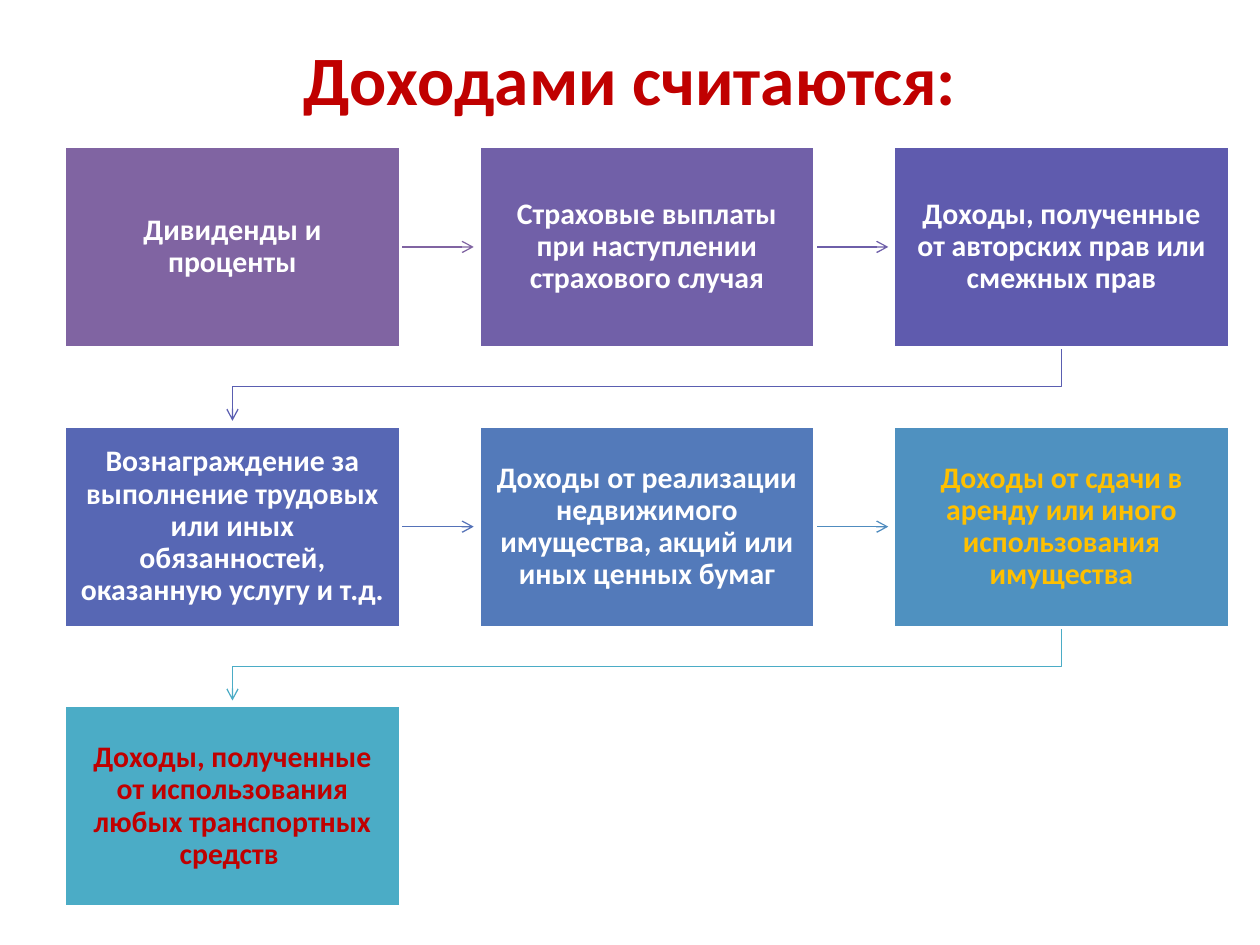
from lxml.etree import SubElement as Sub
from pptx import Presentation
from pptx.dml.color import RGBColor as RGB
from pptx.enum.shapes import MSO_CONNECTOR as Link, MSO_SHAPE as Kind
from pptx.enum.text import MSO_ANCHOR as Anchor, PP_ALIGN as Align
from pptx.oxml.ns import qn
from pptx.util import Inches, Pt

COLORS = {
    "white": "FFFFFF", "red": "C00000", "gold": "FFC000",
    "plum": "8064A2", "violet": "7160A8", "indigo": "5F5BAE", "navy": "5767B4",
    "blue": "537ABA", "sky": "4F91C0", "teal": "4BACC6",
    "to violet": "6E5FA9", "to navy": "5A5EB1",
    "to blue": "5572B8", "to sky": "508CBF",
}
COLS = 3
LEFT, TOP = 0.51, 1.16
WIDE, HIGH = 2.67, 1.6
STEP_X, STEP_Y = 3.29, 2.22
GAP = 0.04
TURN = 0.31

ITEMS = [
    ("Дивиденды и проценты", "plum", "white", "plum"),
    ("Страховые выплаты при наступлении страхового случая",
     "violet", "white", "to violet"),
    ("Доходы, полученные от авторских прав или смежных прав",
     "indigo", "white", "to navy"),
    ("Вознаграждение за выполнение трудовых или иных обязанностей, "
     "оказанную услугу и т.д.", "navy", "white", "to blue"),
    ("Доходы от реализации недвижимого имущества, акций или иных ценных бумаг",
     "blue", "white", "to sky"),
    ("Доходы от сдачи в аренду или иного использования имущества",
     "sky", "gold", "teal"),
    ("Доходы, полученные от использования любых транспортных средств ",
     "teal", "red", None),
]


class Deck:
    font = "Calibri"

    def __init__(self):
        self.file = Presentation()
        self.file.slide_width, self.file.slide_height = Inches(10), Inches(7.5)
        self.slide = self.file.slides.add_slide(self.file.slide_layouts[5])
        self.shapes = self.slide.shapes

    def color(self, name):
        return RGB.from_string(COLORS[name])

    def cell(self, col, row):
        return LEFT + col * STEP_X, TOP + row * STEP_Y

    def label(self, shape, text, size, color):
        frame = shape.text_frame
        frame.text = text
        frame.word_wrap = True
        frame.vertical_anchor = Anchor.MIDDLE
        para = frame.paragraphs[0]
        para.alignment = Align.CENTER
        font = para.runs[0].font
        font.name, font.size, font.bold = self.font, Pt(size), True
        font.color.rgb = self.color(color)
        return frame

    def title(self, text):
        head = self.shapes.title
        head.left, head.top = Inches(0.5), Inches(0.3)
        head.width, head.height = Inches(9), Inches(0.64)
        self.label(head, text, 39.6, "red")

    def box(self, col, row, text, fill, ink):
        x, y = self.cell(col, row)
        box = self.shapes.add_shape(
            Kind.RECTANGLE, Inches(x), Inches(y), Inches(WIDE), Inches(HIGH))
        box.shadow.inherit = False
        box.fill.solid()
        box.fill.fore_color.rgb = self.color(fill)
        box.line.color.rgb = self.color("white")
        box.line.width = Pt(2)
        frame = self.label(box, text, 17, ink)
        frame.margin_left = frame.margin_right = Inches(0.13)
        frame.margin_top = frame.margin_bottom = Inches(0.13)
        frame.paragraphs[0].line_spacing = 0.9
        return box

    def point(self, line, color):
        line.line.color.rgb = self.color(color)
        line.line.width = Pt(0.75)
        node = line.element
        Sub(node.spPr.find(qn("a:ln")), qn("a:tailEnd"), type="arrow")
        node.getparent().insert(2, node)

    def arrow(self, col, row, start, color):
        x, y = self.cell(col, row)
        mid = Inches(y + HIGH / 2)
        line = self.shapes.add_connector(
            Link.STRAIGHT, Inches(x + WIDE), mid, Inches(x + STEP_X - GAP), mid)
        line.begin_connect(start, 3)
        Sub(line.element.spPr, qn("a:effectLst"))
        self.point(line, color)

    def bend(self, row, color):
        near, y = self.cell(0, row)
        far = self.cell(COLS - 1, row)[0] + WIDE / 2
        near += WIDE / 2
        base = y + HIGH
        pen = self.shapes.build_freeform(Inches(far), Inches(base), scale=1.0)
        turns = [(far, base + TURN), (near, base + TURN), (near, y + STEP_Y - GAP)]
        pen.add_line_segments([(Inches(a), Inches(b)) for a, b in turns], close=False)
        line = pen.convert_to_shape()
        line.shadow.inherit = False
        line.fill.background()
        self.point(line, color)


def main():
    deck = Deck()
    deck.title("Доходами считаются:")
    for i, (text, fill, ink, link) in enumerate(ITEMS):
        row, col = divmod(i, COLS)
        box = deck.box(col, row, text, fill, ink)
        if link and col < COLS - 1:
            deck.arrow(col, row, box, link)
        elif link:
            deck.bend(row, link)
    deck.file.save("out.pptx")


if __name__ == "__main__":
    main()
